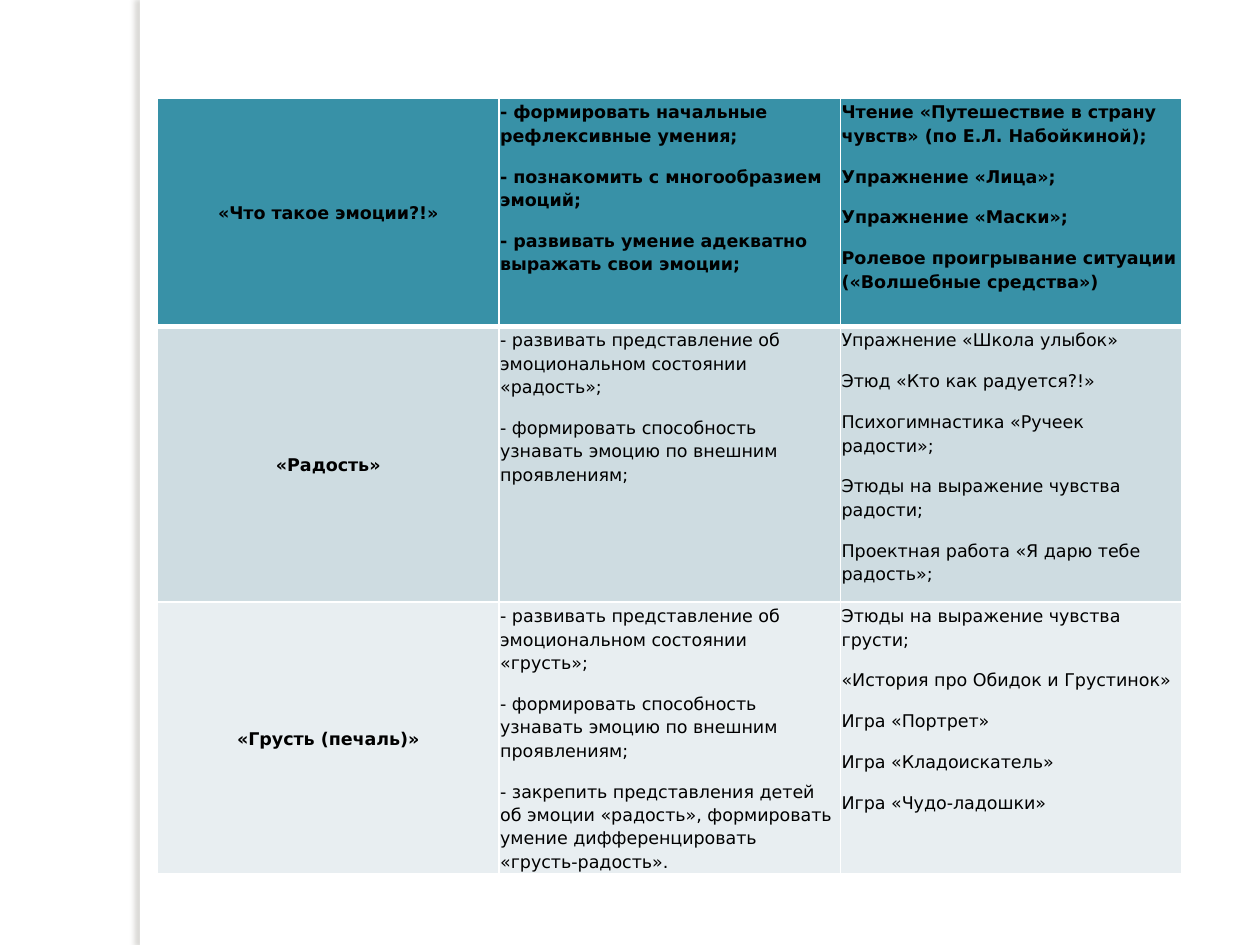
"""Build a slide with a table of lessons about emotions, their aims and activities."""
import pptx
import pptx.dml.color
import pptx.enum.shapes
import pptx.enum.text
import pptx.oxml
import pptx.oxml.ns
import pptx.util

COLORS = {
    "white": "FFFFFF",
    "text": "000000",
    "shadow": "736F63",
    "bands": ["3891A7", "CEDCE1", "E8EEF1"],
}
FONT = "DejaVu Sans"
WIDTH, HEIGHT = 10, 7.5
TABLE_LEFT, TABLE_TOP, TABLE_WIDTH = 1.25, 0.78, 8.13
ROW_HEIGHTS = [1.81, 2.19, 2.09]

LESSONS = [
    (
        ["«Что такое эмоции?!»"],
        [
            "- формировать начальные рефлексивные умения;",
            "- познакомить с многообразием эмоций;",
            "- развивать умение адекватно выражать свои эмоции;",
        ],
        [
            "Чтение «Путешествие в страну чувств» (по Е.Л. Набойкиной);",
            "Упражнение «Лица»;",
            "Упражнение «Маски»;",
            "Ролевое проигрывание ситуации («Волшебные средства»)",
        ],
    ),
    (
        ["«Радость»"],
        [
            "- развивать представление об эмоциональном состоянии «радость»;",
            "- формировать способность узнавать эмоцию по внешним проявлениям;",
        ],
        [
            "Упражнение «Школа улыбок»",
            "Этюд «Кто как радуется?!»",
            "Психогимнастика «Ручеек радости»;",
            "Этюды на выражение чувства радости;",
            "Проектная работа «Я дарю тебе радость»;",
        ],
    ),
    (
        ["«Грусть (печаль)»"],
        [
            "- развивать представление об эмоциональном состоянии «грусть»;",
            "- формировать способность узнавать эмоцию по внешним проявлениям;",
            "- закрепить представления детей об эмоции «радость», "
            "формировать умение дифференцировать «грусть-радость».",
        ],
        [
            "Этюды на выражение чувства грусти;",
            "«История про Обидок и Грустинок»",
            "Игра «Портрет»",
            "Игра «Кладоискатель»",
            "Игра «Чудо-ладошки»",
        ],
    ),
]


def rgb(value):
    """Turn a hex string into a colour."""
    return pptx.dml.color.RGBColor.from_string(value)


def write(frame, lines, size=10, bold=False, align=pptx.enum.text.PP_ALIGN.LEFT):
    """Write lines as paragraphs of a text frame."""
    for index, line in enumerate(lines):
        paragraph = frame.paragraphs[0] if index == 0 else frame.add_paragraph()
        paragraph.alignment = align
        paragraph.line_spacing = 1.15
        paragraph.space_after = pptx.util.Pt(10)
        run = paragraph.add_run()
        run.text = line
        run.font.name = FONT
        run.font.size = pptx.util.Pt(size)
        run.font.bold = bold
        run.font.color.rgb = rgb(COLORS["text"])


def set_borders(cell, **widths):
    """Draw white cell borders with widths in points, keyed by side."""
    properties = cell._tc.get_or_add_tcPr()
    for position, (side, width) in enumerate(widths.items()):
        properties.insert(position, pptx.oxml.parse_xml(
            f'<a:ln{side} {pptx.oxml.ns.nsdecls("a")} w="{pptx.util.Pt(width)}">'
            f'<a:solidFill><a:srgbClr val="{COLORS["white"]}"/></a:solidFill></a:ln{side}>'
        ))


def add_strip(slide):
    """Add the white vertical strip with a shadow on its left."""
    strip = slide.shapes.add_shape(
        pptx.enum.shapes.MSO_SHAPE.RECTANGLE,
        pptx.util.Inches(1.11), 0, pptx.util.Inches(0.08), pptx.util.Inches(HEIGHT),
    )
    strip.fill.solid()
    strip.fill.fore_color.rgb = rgb(COLORS["white"])
    strip.line.fill.background()
    strip.shadow.inherit = False
    effects = strip._element.spPr.find(pptx.oxml.ns.qn("a:effectLst"))
    effects.append(pptx.oxml.parse_xml(
        f'<a:outerShdw {pptx.oxml.ns.nsdecls("a")} blurRad="{pptx.util.Pt(3)}" '
        f'dist="{pptx.util.Pt(3)}" dir="10800000" algn="ctr" rotWithShape="0">'
        f'<a:srgbClr val="{COLORS["shadow"]}"><a:alpha val="25000"/></a:srgbClr></a:outerShdw>'
    ))


def add_lessons(slide):
    """Add the table, one row per lesson."""
    lessons = slide.shapes.add_table(
        len(LESSONS), len(LESSONS[0]),
        pptx.util.Inches(TABLE_LEFT), pptx.util.Inches(TABLE_TOP),
        pptx.util.Inches(TABLE_WIDTH), pptx.util.Inches(sum(ROW_HEIGHTS)),
    ).table
    for row, lesson in enumerate(LESSONS):
        lessons.rows[row].height = pptx.util.Inches(ROW_HEIGHTS[row])
        for column, lines in enumerate(lesson):
            cell = lessons.cell(row, column)
            is_topic = column == 0
            cell.margin_left = cell.margin_right = pptx.util.Inches(0.01)
            cell.margin_top = cell.margin_bottom = pptx.util.Inches(0.01)
            anchors = pptx.enum.text.MSO_ANCHOR
            cell.vertical_anchor = anchors.MIDDLE if is_topic else anchors.TOP
            cell.fill.solid()
            cell.fill.fore_color.rgb = rgb(COLORS["bands"][row])
            set_borders(cell, L=1, R=1, T=3 if row == 1 else 1, B=3 if row == 0 else 1)
            aligns = pptx.enum.text.PP_ALIGN
            write(cell.text_frame, lines, bold=is_topic or row == 0,
                  align=aligns.CENTER if is_topic else aligns.LEFT)


def main():
    """Build and save the slide."""
    deck = pptx.Presentation()
    deck.slide_width = pptx.util.Inches(WIDTH)
    deck.slide_height = pptx.util.Inches(HEIGHT)
    slide = deck.slides.add_slide(deck.slide_layouts[6])
    add_strip(slide)
    add_lessons(slide)
    deck.save("out.pptx")


if __name__ == "__main__":
    main()
